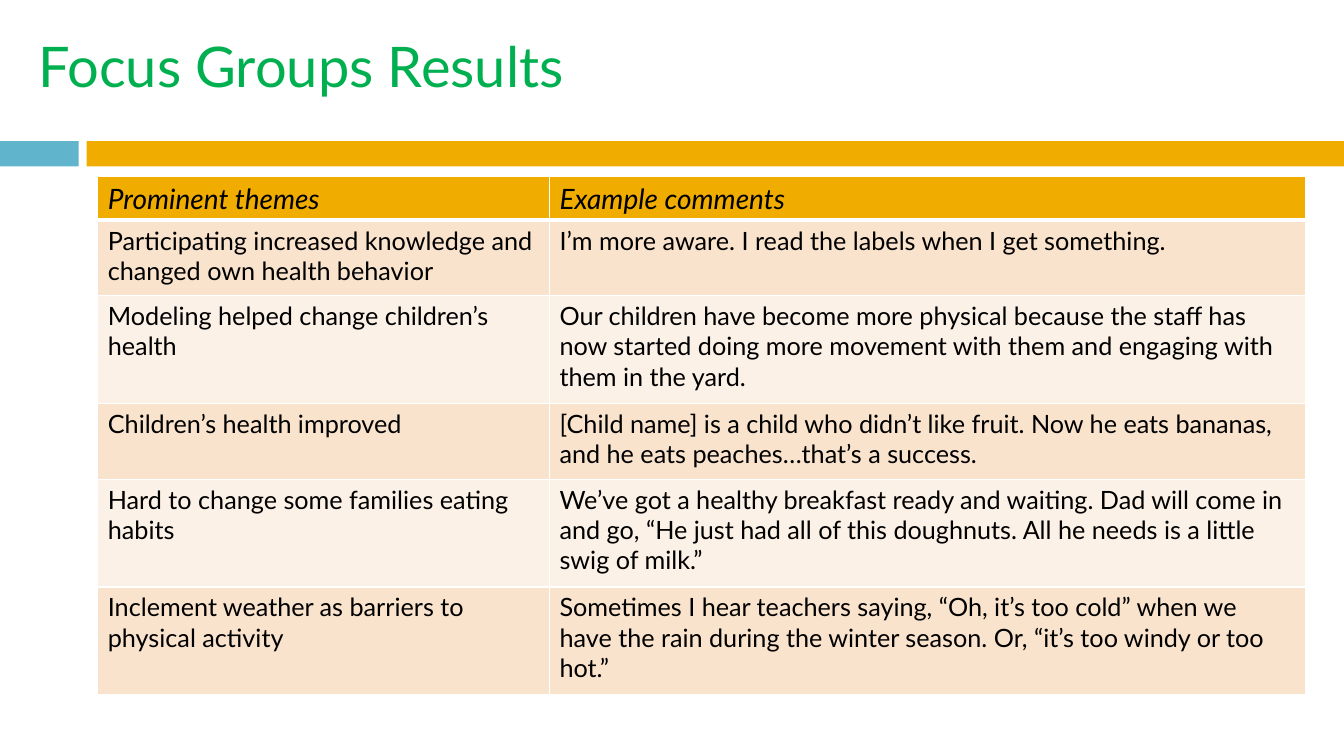
import dataclasses

import pptx
import pptx.dml.color
import pptx.enum.shapes
import pptx.enum.text
import pptx.oxml
import pptx.oxml.ns
import pptx.util
from pptx.util import Inches


@dataclasses.dataclass(frozen=True)
class Theme:
    font: str = "Lato"
    ink: str = "000000"
    title: str = "00B050"
    blue: str = "60B5CC"
    gold: str = "F0AD00"
    rule: str = "FFFFFF"
    bands: tuple = ("F9E3CC", "FCF1E7")
    title_size: int = 40
    head_size: int = 20
    body_size: int = 18


THEME = Theme()

COLS = (4.48, 7.5)
HEIGHTS = (0.43, 0.75, 1.07, 0.75, 1.07, 1.07)
HEAD = ("Prominent themes", "Example comments")
ROWS = (
    ("Participating increased knowledge and changed own health behavior",
     "I’m more aware. I read the labels when I get something."),
    ("Modeling helped change children’s health",
     "Our children have become more physical because the staff has now "
     "started doing more movement with them and engaging with them in the yard."),
    ("Children’s health improved",
     "[Child name] is a child who didn’t like fruit. Now he eats bananas, "
     "and he eats peaches…that’s a success."),
    ("Hard to change some families eating habits",
     "We’ve got a healthy breakfast ready and waiting. Dad will come in and go, "
     "“He just had all of this doughnuts. All he needs is a little swig of milk.”"),
    ("Inclement weather as barriers to physical activity",
     "Sometimes I hear teachers saying, “Oh, it’s too cold” when we have the rain "
     "during the winter season. Or, “it’s too windy or too hot.”"),
)


def paint(fill, color):
    fill.solid()
    fill.fore_color.rgb = pptx.dml.color.RGBColor.from_string(color)


def write(frame, text, size=THEME.body_size, color=THEME.ink, italic=False):
    frame.word_wrap = True
    run = frame.paragraphs[0].add_run()
    run.text = text
    font = run.font
    font.name = THEME.font
    font.size = pptx.util.Pt(size)
    font.bold = False
    font.italic = italic
    font.color.rgb = pptx.dml.color.RGBColor.from_string(color)


def add_title(slide, text):
    box = slide.shapes.add_textbox(Inches(0.28), Inches(0.11),
                                   Inches(11.89), Inches(1.08))
    box.text_frame.vertical_anchor = pptx.enum.text.MSO_ANCHOR.MIDDLE
    write(box.text_frame, text, size=THEME.title_size, color=THEME.title)


def add_bar(slide, left, width, color):
    bar = slide.shapes.add_shape(pptx.enum.shapes.MSO_SHAPE.RECTANGLE,
                                 Inches(left), Inches(1.4),
                                 Inches(width), Inches(0.25))
    bar.shadow.inherit = False
    paint(bar.fill, color)
    bar.line.fill.background()


def set_edges(cell, **points):
    """Draw the cell borders; points maps L, R, T and B, in that order, to widths."""
    props = cell._tc.get_or_add_tcPr()
    for spot, (side, width) in enumerate(points.items()):
        props.insert(spot, pptx.oxml.parse_xml(
            f'<a:ln{side} {pptx.oxml.ns.nsdecls("a")} w="{pptx.util.Pt(width)}">'
            f'<a:solidFill><a:srgbClr val="{THEME.rule}"/></a:solidFill>'
            f'</a:ln{side}>'))


def add_grid(slide):
    table = slide.shapes.add_table(
        len(HEIGHTS), len(COLS), Inches(0.97), Inches(1.75),
        Inches(sum(COLS)), Inches(sum(HEIGHTS))).table
    for col, width in zip(table.columns, COLS):
        col.width = Inches(width)
    for row, height in zip(table.rows, HEIGHTS):
        row.height = Inches(height)
    for i, texts in enumerate((HEAD, *ROWS)):
        head = i == 0
        color = THEME.gold if head else THEME.bands[(i - 1) % 2]
        size = THEME.head_size if head else THEME.body_size
        for j, text in enumerate(texts):
            cell = table.cell(i, j)
            paint(cell.fill, color)
            write(cell.text_frame, text, size=size, italic=head)
            set_edges(cell, L=1, R=1, T=3 if i == 1 else 1, B=3 if head else 1)


def main():
    deck = pptx.Presentation()
    deck.slide_width, deck.slide_height = Inches(13.33), Inches(7.5)
    slide = deck.slides.add_slide(deck.slide_layouts[6])
    add_bar(slide, 0, 0.78, THEME.blue)
    add_bar(slide, 0.86, 12.47, THEME.gold)
    add_title(slide, "Focus Groups Results")
    add_grid(slide)
    deck.save("out.pptx")


if __name__ == "__main__":
    main()
